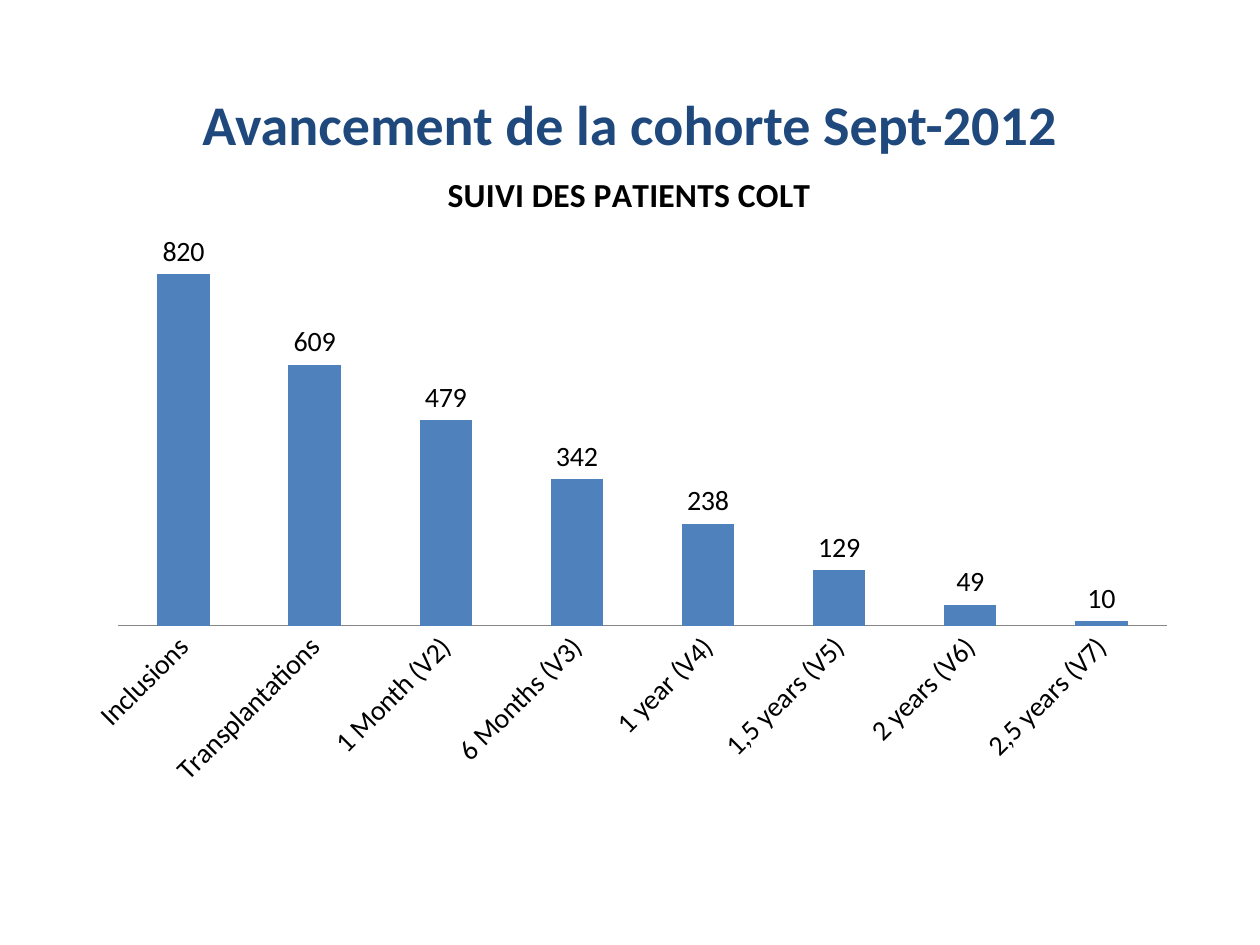
"""Build a slide showing cohort progress as a column chart of patient follow-up."""
import pptx
import pptx.chart.data
import pptx.dml.color
import pptx.enum.chart
import pptx.enum.text
import pptx.oxml
import pptx.oxml.ns
import pptx.util

TITLE = "Avancement de la cohorte Sept-2012"
CHART_TITLE = "SUIVI DES PATIENTS COLT"
FOLLOW_UP = [
    ("Inclusions", 820),
    ("Transplantations", 609),
    ("1 Month (V2)", 479),
    ("6 Months (V3)", 342),
    ("1 year (V4)", 238),
    ("1,5 years (V5)", 129),
    ("2 years (V6)", 49),
    ("2,5 years (V7)", 10),
]
COLOURS = {"title": "1F497D", "column": "4F81BD", "text": "000000", "axis": "868686"}
FONT = "Calibri"
WIDTH, HEIGHT = 10, 7.5
TITLE_PERCENT = (5, 8.8, 90, 10.4)
CHART_PERCENT = (5.6, 15.33, 88.7, 69.33)
PLOT_PERCENT = {"x": 4.25, "y": 14.5, "w": 93.86, "h": 58.9}
CHART_TITLE_PERCENT = {"x": 33.2, "y": 3}


def place(box):
    """Turn percentages of the slide into left, top, width and height."""
    return [pptx.util.Inches(part / 100 * side) for part, side in zip(box, (WIDTH, HEIGHT) * 2)]


def style(font, size, colour, bold=False):
    """Set the typeface, size, colour and weight of a font."""
    font.name, font.size, font.bold = FONT, pptx.util.Pt(size), bold
    font.color.rgb = pptx.dml.color.RGBColor.from_string(COLOURS[colour])


def manual_layout(percentages, inner=False):
    """Return a chart layout element made of percentages of the chart."""
    target = '<c:layoutTarget val="inner"/>' if inner else ""
    modes = "".join(f'<c:{key}Mode val="edge"/>' for key in "xy")
    values = "".join(f'<c:{key} val="{part / 100}"/>' for key, part in percentages.items())
    return pptx.oxml.parse_xml(
        f'<c:layout {pptx.oxml.ns.nsdecls("c")}><c:manualLayout>'
        f"{target}{modes}{values}</c:manualLayout></c:layout>"
    )


def replace_layout(parent, layout, index):
    """Put a layout in a chart element in place of any present one."""
    for old in parent.findall(pptx.oxml.ns.qn("c:layout")):
        parent.remove(old)
    parent.insert(index, layout)


def add_title(slide):
    """Add the slide title."""
    frame = slide.shapes.add_textbox(*place(TITLE_PERCENT)).text_frame
    frame.word_wrap = True
    frame.vertical_anchor = pptx.enum.text.MSO_ANCHOR.TOP
    paragraph = frame.paragraphs[0]
    paragraph.text = TITLE
    paragraph.alignment = pptx.enum.text.PP_ALIGN.CENTER
    style(paragraph.font, 32, "title", True)


def add_follow_up_chart(slide):
    """Add the column chart of patients at each visit."""
    categories, counts = zip(*FOLLOW_UP)
    data = pptx.chart.data.CategoryChartData()
    data.categories = categories
    data.add_series("Series 1", counts)
    kind = pptx.enum.chart.XL_CHART_TYPE.COLUMN_CLUSTERED
    chart = slide.shapes.add_chart(kind, *place(CHART_PERCENT), data).chart
    style(chart.font, 16, "text")
    chart.has_legend = False

    chart.has_title = True
    paragraph = chart.chart_title.text_frame.paragraphs[0]
    paragraph.text = CHART_TITLE
    style(paragraph.font, 19.2, "text", True)
    replace_layout(chart.chart_title._element, manual_layout(CHART_TITLE_PERCENT), 1)

    plot = chart.plots[0]
    plot.gap_width = 150
    plot.vary_by_categories = False
    replace_layout(plot._element.getparent(), manual_layout(PLOT_PERCENT, True), 0)
    fill = plot.series[0].format.fill
    fill.solid()
    fill.fore_color.rgb = pptx.dml.color.RGBColor.from_string(COLOURS["column"])
    plot.has_data_labels = True
    labels = plot.data_labels
    labels.show_value = True
    labels.position = pptx.enum.chart.XL_LABEL_POSITION.OUTSIDE_END
    style(labels.font, 16, "text")

    visits = chart.category_axis
    visits.major_tick_mark = pptx.enum.chart.XL_TICK_MARK.NONE
    visits.format.line.width = pptx.util.Pt(0.25)
    visits.format.line.color.rgb = pptx.dml.color.RGBColor.from_string(COLOURS["axis"])
    style(visits.tick_labels.font, 16, "text")
    body = visits._element.find(".//" + pptx.oxml.ns.qn("a:bodyPr"))
    body.set("rot", str(-45 * 60000))
    body.set("vert", "horz")

    patients = chart.value_axis
    patients.minimum_scale, patients.maximum_scale = 0, 900
    patients.has_major_gridlines = False
    patients.visible = False


def main():
    """Create the presentation and save it."""
    presentation = pptx.Presentation()
    presentation.slide_width = pptx.util.Inches(WIDTH)
    presentation.slide_height = pptx.util.Inches(HEIGHT)
    slide = presentation.slides.add_slide(presentation.slide_layouts[6])
    add_title(slide)
    add_follow_up_chart(slide)
    presentation.save("out.pptx")


if __name__ == "__main__":
    main()
